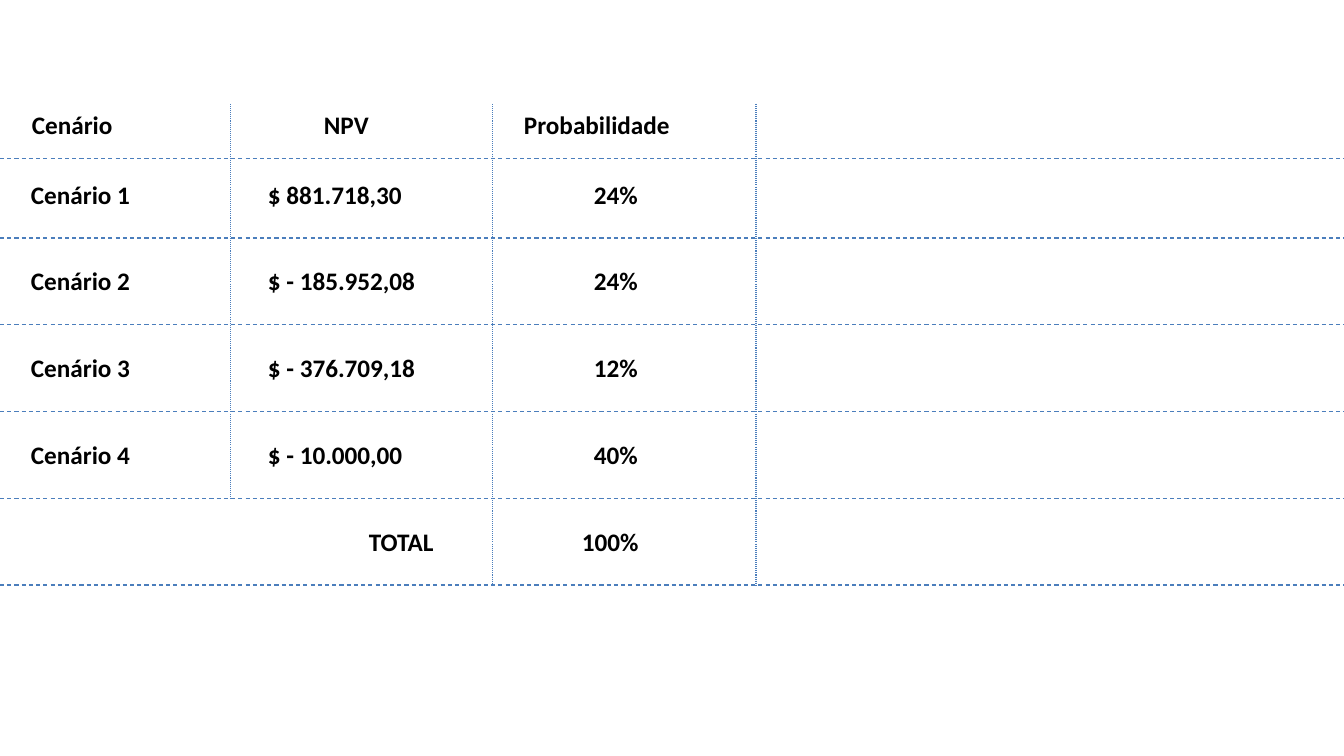
from pptx import Presentation
from pptx.dml.color import RGBColor
from pptx.enum.dml import MSO_LINE
from pptx.enum.shapes import MSO_CONNECTOR
from pptx.enum.text import MSO_AUTO_SIZE
from pptx.oxml.ns import qn
from pptx.util import Pt
from lxml.etree import SubElement

# Content: (text, left px, width px) for each cell
HEADER = [("Cenário", 22, 102), ("NPV", 314, 66), ("Probabilidade", 514, 168)]
ROWS = [
    [("Cenário 1", 21, 121), ("$ 881.718,30", 258, 155), ("24%", 584, 65)],
    [("Cenário 2", 21, 121), ("$ - 185.952,08", 258, 168), ("24%", 584, 65)],
    [("Cenário 3", 21, 121), ("$ - 376.709,18", 258, 168), ("12%", 584, 65)],
    [("Cenário 4", 21, 121), ("$ - 10.000,00", 258, 156), ("40%", 584, 65)],
    [("TOTAL", 359, 89), ("100%", 572, 78)],
]

# Layout in px
EMU_PER_PX = 914400 / 100.8
WIDTH, HEIGHT = 1344, 756
TOP, HEADER_LINE, FIRST_LINE, ROW_PITCH = 104, 159, 238, 86.75
TEXT_RISE, TEXT_HEIGHT = 64, 40
row_lines = [FIRST_LINE + i * ROW_PITCH for i in range(len(ROWS))]
COLUMN_LINES = [(231, row_lines[-2]), (493, row_lines[-1]), (756, row_lines[-1])]


def px(n):
    return round(n * EMU_PER_PX)


def color(hex_value):
    return RGBColor.from_string(hex_value)


def add_line(x1, y1, x2, y2, dash):
    line = s.shapes.add_connector(MSO_CONNECTOR.STRAIGHT, px(x1), px(y1), px(x2), px(y2))
    line.line.color.rgb = color("4B7EBC")
    line.line.width = Pt(0.75)
    line.line.dash_style = dash
    SubElement(line._element.spPr, qn("a:effectLst"))


def add_cells(cells, top):
    for text, left, width in cells:
        sp = s.shapes.add_textbox(px(left), px(top), px(width), px(TEXT_HEIGHT))
        tf = sp.text_frame
        tf.word_wrap = False
        tf.auto_size = MSO_AUTO_SIZE.SHAPE_TO_FIT_TEXT
        p = tf.paragraphs[0]
        p.text = text
        p.font.name = "Calibri"
        p.font.size = Pt(18)
        p.font.bold = True
        p.font.color.rgb = color("000000")


prs = Presentation()
prs.slide_width, prs.slide_height = px(WIDTH), px(HEIGHT)
s = prs.slides.add_slide(prs.slide_layouts[6])

# Grid lines
for y in [HEADER_LINE] + row_lines:
    add_line(0, y, WIDTH, y, MSO_LINE.DASH)
for x, bottom in COLUMN_LINES:
    add_line(x, TOP, x, bottom, MSO_LINE.ROUND_DOT)

# Header and rows
add_cells(HEADER, TOP)
for cells, y in zip(ROWS, row_lines):
    add_cells(cells, y - TEXT_RISE)

prs.save("out.pptx")
